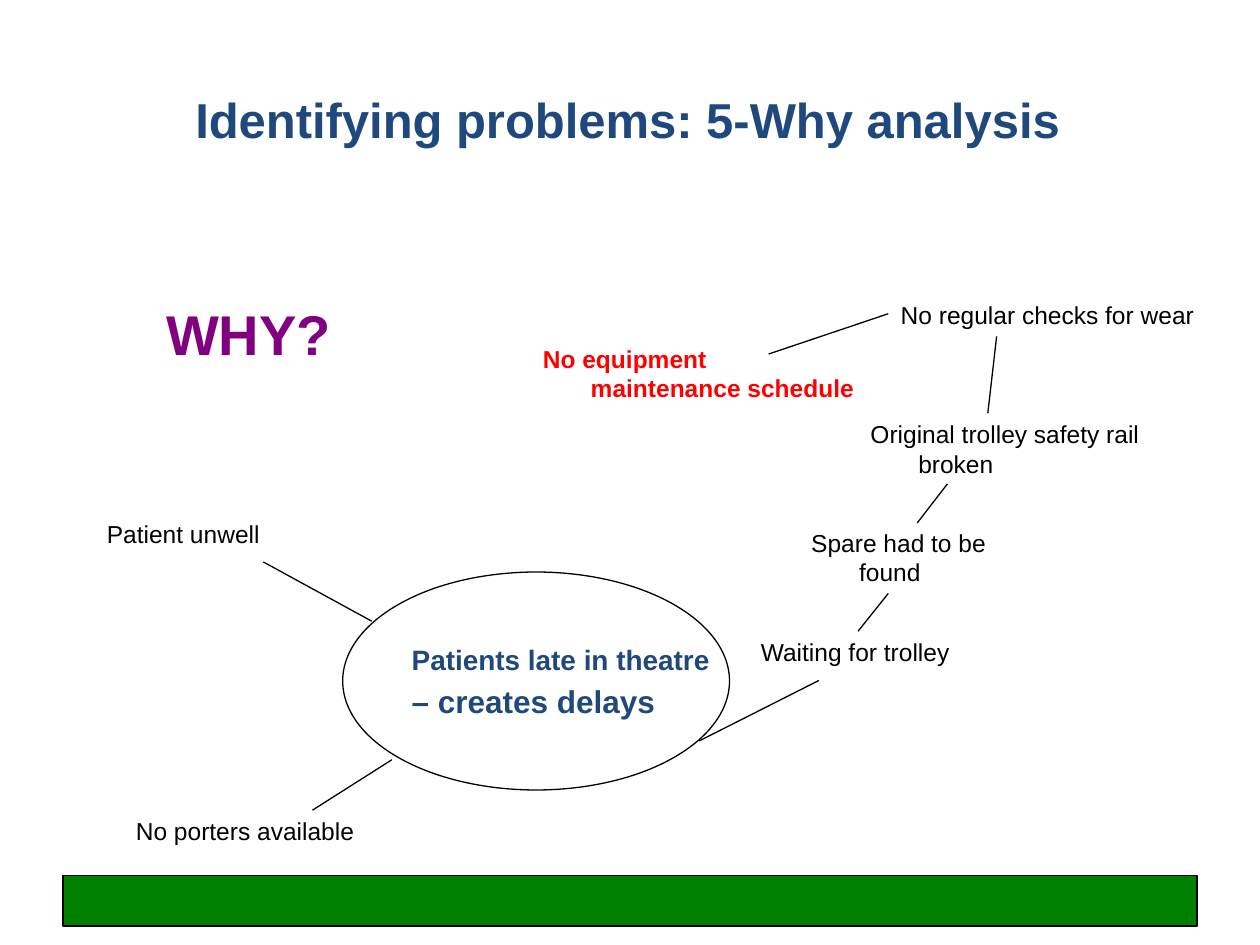
from lxml import etree
from pptx import Presentation
from pptx import util as u
from pptx.dml.color import RGBColor
from pptx.enum import shapes, text
from pptx.oxml.ns import qn


def tint(code):
    return RGBColor.from_string(code)


def style(par, size, code, bold, gap):
    par.alignment = text.PP_ALIGN.LEFT
    props = par._p.get_or_add_pPr()
    props.set("marL", str(u.Inches(0.38)))
    props.set("indent", str(u.Inches(-0.38)))
    space = etree.SubElement(props, qn("a:spcBef"))
    etree.SubElement(space, qn("a:spcPct")).set("val", str(gap * 1000))
    for run in par.runs:
        run.font.name = "Arial"
        run.font.size = u.Pt(size)
        run.font.bold = bold
        run.font.color.rgb = tint(code)


deck = Presentation()
deck.slide_width, deck.slide_height = u.Inches(10), u.Inches(7.5)
slide = deck.slides.add_slide(deck.slide_layouts[5])
items = slide.shapes

title = items.title
title.left, title.top = u.Inches(1.45), u.Inches(0.66)
title.width, title.height = u.Inches(7.42), u.Inches(0.63)
frame = title.text_frame
frame.text = "Identifying problems: 5-Why analysis"
frame.vertical_anchor = text.MSO_ANCHOR.TOP
frame.auto_size = text.MSO_AUTO_SIZE.NONE
style(frame.paragraphs[0], 28, "1F497D", True, 20)

kind = shapes.MSO_SHAPE
bar = items.add_shape(kind.RECTANGLE, u.Inches(0.5), u.Inches(6.95), u.Inches(9), u.Inches(0.4))
bar.fill.solid()
bar.fill.fore_color.rgb = tint("008000")

oval = items.add_shape(kind.OVAL, u.Inches(2.72), u.Inches(4.54), u.Inches(3.07), u.Inches(1.73))
oval.fill.background()
frame = oval.text_frame
frame.text = "Patients late in theatre\n– creates delays"
frame.word_wrap = False
frame.vertical_anchor = text.MSO_ANCHOR.MIDDLE
for par, size in zip(frame.paragraphs, (16, 18)):
    style(par, size, "1F497D", True, 20)

for shape in (bar, oval):
    shape.shadow.inherit = False
    shape.line.color.rgb = tint("000000")
    shape.line.width = u.Pt(0.75)

links = [
    (2.95, 4.93, 2.09, 4.46),
    (3.11, 6.03, 2.48, 6.43),
    (5.55, 5.88, 6.5, 5.4),
    (6.81, 5.01, 7.05, 4.71),
    (7.28, 4.15, 7.52, 3.84),
    (7.84, 3.28, 7.91, 2.67),
    (7.05, 2.49, 6.1, 2.81),
]
for ends in links:
    link = items.add_connector(shapes.MSO_CONNECTOR.STRAIGHT, *map(u.Inches, ends))
    link.line.color.rgb = tint("000000")
    link.line.width = u.Pt(0.75)
    etree.SubElement(link._element.spPr, qn("a:effectLst"))

notes = [
    ("Patient unwell", 0.75, 4.07, 1.97, 0.33, 14, "000000", False),
    ("No porters available", 0.98, 6.43, 1.97, 0.33, 14, "000000", False),
    ("Waiting for trolley", 5.94, 5.01, 1.97, 0.33, 14, "000000", False),
    ("Spare had to be found", 6.34, 4.14, 1.97, 0.57, 14, "000000", False),
    ("Original trolley safety rail broken", 6.81, 3.28, 2.68, 0.57, 14, "000000", False),
    ("No regular checks for wear", 7.05, 2.33, 2.68, 0.33, 14, "000000", False),
    ("No equipment maintenance schedule", 4.21, 2.68, 2.68, 0.57, 14, "FF0000", True),
    ("WHY?", 1.22, 2.33, 2.68, 0.63, 32, "800080", True),
]
for words, left, top, wide, high, size, code, bold in notes:
    box = items.add_textbox(u.Inches(left), u.Inches(top), u.Inches(wide), u.Inches(high))
    frame = box.text_frame
    frame.text = words
    frame.word_wrap = True
    frame.auto_size = text.MSO_AUTO_SIZE.SHAPE_TO_FIT_TEXT
    style(frame.paragraphs[0], size, code, bold, 50)

deck.save("out.pptx")
